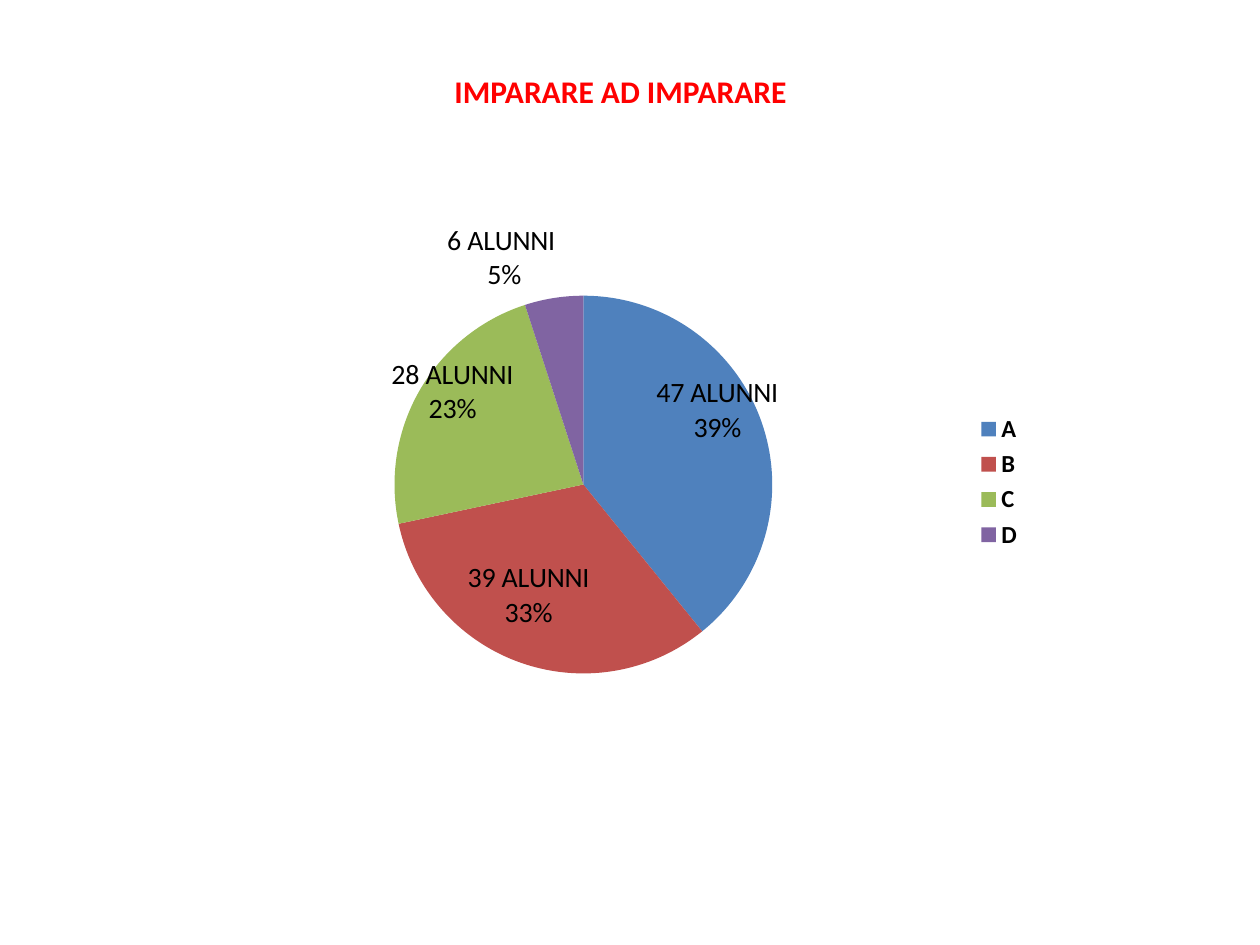
from dataclasses import dataclass

from lxml.etree import SubElement, Element
from pptx import Presentation
from pptx.chart.data import CategoryChartData as Data
from pptx.dml.color import RGBColor as RGB
from pptx.enum.chart import XL_CHART_TYPE as Kind, XL_LABEL_POSITION as Spot
from pptx.enum.chart import XL_LEGEND_POSITION as Side
from pptx.enum.text import MSO_ANCHOR as Anchor, PP_ALIGN as Align
from pptx.oxml.ns import qn
from pptx.util import Inches, Pt


@dataclass(frozen=True)
class Theme:
    face: str = "Calibri"
    title: str = "FF0000"
    ink: str = "000000"
    head: int = 18
    label: int = 16
    key: int = 14


THEME = Theme()
WIDE, HIGH = Inches(10), Inches(7.5)

# grade, pupils, label, colour, label shift from mid-slice in % of the chart
GRADES = [
    ("A", 47, "47 ALUNNI 39%", "4F81BD", (5.4, -7.6)),
    ("B", 39, "39 ALUNNI 33%", "C0504D", (-2.8, 4)),
    ("C", 28, "28 ALUNNI 23%", "9BBB59", (-5.9, -8.1)),
    ("D", 6, "6 ALUNNI\n 5%", "8064A2", (-8.1, -24)),
]


def area(left, top, width, height):
    """Turn percentages of the slide into lengths."""
    return (int(WIDE * left / 100), int(HIGH * top / 100),
            int(WIDE * width / 100), int(HIGH * height / 100))


def style(font, size, color=THEME.ink, bold=False):
    font.name, font.size, font.bold = THEME.face, Pt(size), bold
    font.color.rgb = RGB.from_string(color)


def place(node, index, modes=(), **shares):
    """Give a chart part a manual layout, in percent of the chart."""
    for old in node.findall(qn("c:layout")):
        node.remove(old)
    root = Element(qn("c:layout"))
    manual = SubElement(root, qn("c:manualLayout"))
    for name, value in modes:
        SubElement(manual, qn(f"c:{name}")).set("val", value)
    for name, value in shares.items():
        SubElement(manual, qn(f"c:{name}")).set("val", f"{value / 100:.3f}")
    node.insert(index, root)


def add_title(slide, text, box):
    frame = slide.shapes.add_textbox(*box).text_frame
    frame.word_wrap = True
    frame.vertical_anchor = Anchor.TOP
    line = frame.paragraphs[0]
    line.text, line.alignment = text, Align.CENTER
    style(line.font, THEME.head, THEME.title, True)


def add_label(point, text):
    label = point.data_label
    label.text_frame.text = text
    for line in label.text_frame.paragraphs:
        style(line.font, THEME.label)
    label.position = Spot.CENTER


def add_pie(slide, box):
    data = Data()
    data.categories = [grade[0] for grade in GRADES]
    data.add_series("Series 1", [grade[1] for grade in GRADES])
    chart = slide.shapes.add_chart(Kind.PIE, *box, data).chart
    chart.has_title = False
    style(chart.font, 10)
    chart.has_legend = True
    chart.legend.position = Side.RIGHT
    chart.legend.include_in_layout = False
    style(chart.legend.font, THEME.key, bold=True)

    plot = chart.plots[0]
    plot.vary_by_categories = True
    row = plot.series[0]
    for i, (_, _, text, color, _) in enumerate(GRADES):
        point = row.points[i]
        point.format.fill.solid()
        point.format.fill.fore_color.rgb = RGB.from_string(color)
        add_label(point, text)
    labels = row.data_labels
    labels.show_value = labels.show_percentage = True
    style(labels.font, THEME.label, bold=True)

    root = chart.element
    for node, grade in zip(root.iter(qn("c:dLbl")), GRADES):
        x, y = grade[-1]
        place(node, 1, x=x, y=y)
        node.find(qn("c:showPercent")).set("val", "1")
    for node in root.iter(qn("c:showLeaderLines")):
        node.set("val", "0")
    modes = [("layoutTarget", "inner"), ("xMode", "edge"), ("yMode", "edge")]
    place(next(root.iter(qn("c:plotArea"))), 0, modes,
          x=23, y=16.5, w=45.4, h=68)


def main():
    deck = Presentation()
    deck.slide_width, deck.slide_height = WIDE, HIGH
    slide = deck.slides.add_slide(deck.slide_layouts[6])
    add_title(slide, "IMPARARE AD IMPARARE", area(21.7, 6.93, 55.1, 5.33))
    add_pie(slide, area(16.1, 21.6, 66.1, 58.8))
    deck.save("out.pptx")


if __name__ == "__main__":
    main()
